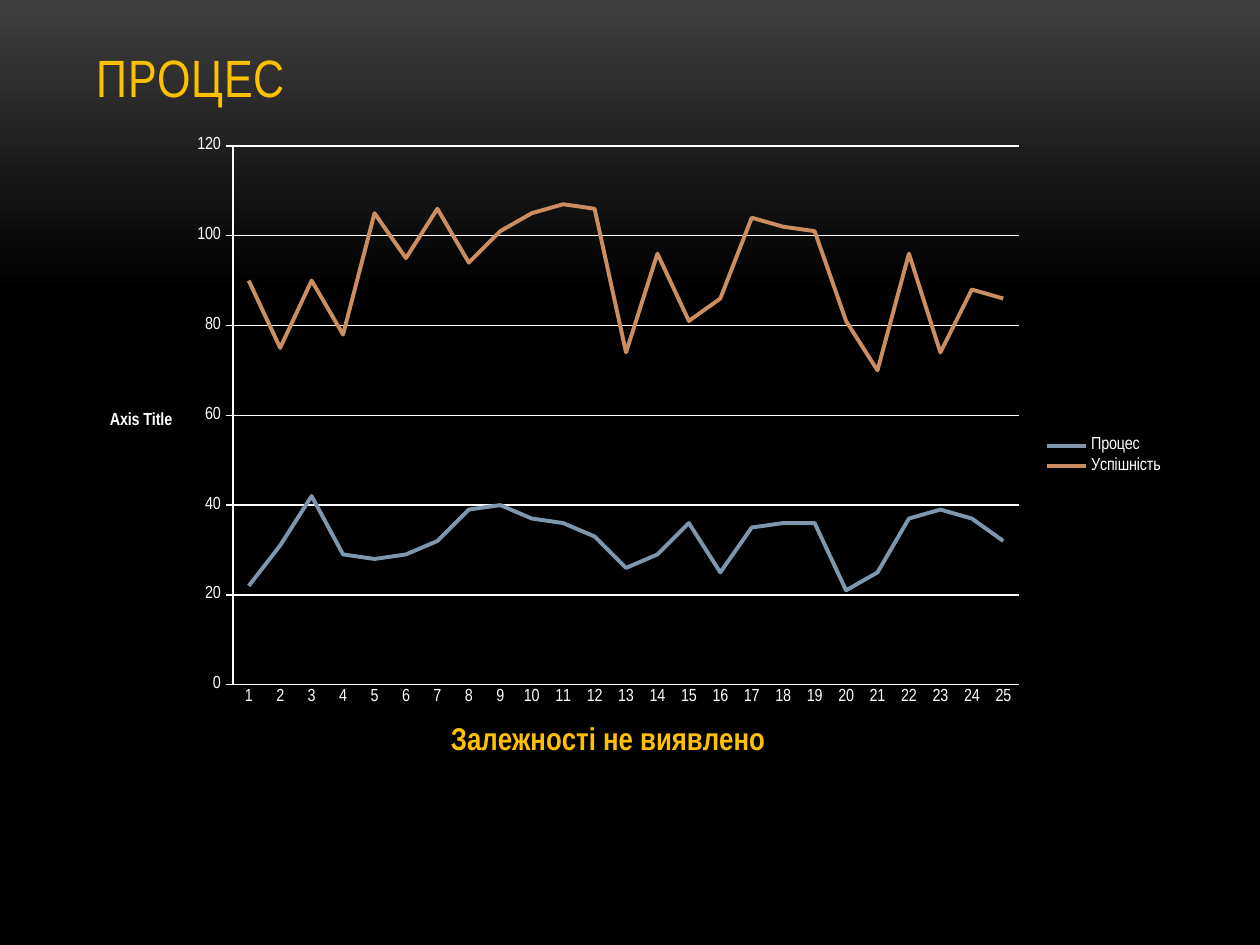
from pptx import Presentation
from pptx.chart.data import CategoryChartData
from pptx.dml.color import RGBColor as RGB
from pptx.enum.chart import XL_CHART_TYPE as CT, XL_LEGEND_POSITION as LP, XL_TICK_MARK as TM
from pptx.enum.text import MSO_ANCHOR as ANCHOR
from pptx.util import Inches, Pt

COLORS = {"top": "3F3F3F", "black": "000000", "gold": "FFC000", "white": "FFFFFF",
          "process": "7E97AD", "success": "CC8E60"}
SERIES = [
    ("Процес", "process", [22, 31, 42, 29, 28, 29, 32, 39, 40, 37, 36, 33, 26,
                           29, 36, 25, 35, 36, 36, 21, 25, 37, 39, 37, 32]),
    ("Успішність", "success", [90, 75, 90, 78, 105, 95, 106, 94, 101, 105, 107, 106, 74,
                               96, 81, 86, 104, 102, 101, 81, 70, 96, 74, 88, 86]),
]


class Deck:
    """Holds the style and the current slide."""

    def __init__(self, prs, font):
        self.font = font
        self.s = prs.slides.add_slide(prs.slide_layouts[6])

    def style(self, font, color, **values):
        for name, value in {"name": self.font, **values}.items():
            setattr(font, name, value)
        font.color.rgb = RGB.from_string(COLORS[color])

    def line(self, fmt, color, width):
        fmt.line.color.rgb = RGB.from_string(COLORS[color])
        fmt.line.width = Pt(width)

    def background(self, stops):
        fill = self.s.background.fill
        fill.gradient()
        fill.gradient_angle = 270
        for stop, (position, color) in zip(fill.gradient_stops, stops):
            stop.position = position
            stop.color.rgb = RGB.from_string(COLORS[color])

    def text(self, box, text, color, size):
        tf = self.s.shapes.add_textbox(*map(Inches, box)).text_frame
        for name, value in {"word_wrap": True, "vertical_anchor": ANCHOR.BOTTOM}.items():
            setattr(tf, name, value)
        r = tf.paragraphs[0].add_run()
        r.text = text
        self.style(r.font, color, size=Pt(size))
        r.font._element.set("spc", "50")

    def axis_title(self, axis, text, color, size):
        title = axis.axis_title
        r = title.text_frame.paragraphs[0].add_run()
        r.text = text
        self.style(r.font, color, size=Pt(size), bold=True)
        for body in title.element.xpath(".//a:bodyPr"):
            body.set("rot", "0")
            body.set("vert", "horz")

    def line_chart(self, box, series, x_title, y_title):
        data = CategoryChartData()
        data.categories = [str(n + 1) for n in range(len(series[0][2]))]
        for name, _, values in series:
            data.add_series(name, values)
        chart = self.s.shapes.add_chart(CT.LINE, *map(Inches, box), data).chart
        chart.has_title = False
        chart.has_legend = True
        chart.legend.position = LP.RIGHT
        chart.legend.include_in_layout = False
        self.style(chart.font, "white", size=Pt(10))
        plot = chart.plots[0]
        plot.vary_by_categories = False
        for ser, (_, color, _) in zip(plot.series, series):
            ser.smooth = False
            self.line(ser.format, color, 2.25)
        x, y = chart.category_axis, chart.value_axis
        x.major_tick_mark, y.major_tick_mark = TM.NONE, TM.OUTSIDE
        for axis in (x, y):
            axis.minor_tick_mark = TM.NONE
            self.line(axis.format, "white", 0.75)
        for name, value in {"minimum_scale": 0, "maximum_scale": 120, "major_unit": 20,
                            "has_major_gridlines": True}.items():
            setattr(y, name, value)
        self.line(y.major_gridlines.format, "white", 0.75)
        self.axis_title(x, x_title, "gold", 18)
        self.axis_title(y, y_title, "white", 10)


def main():
    prs = Presentation()
    prs.slide_width, prs.slide_height = Inches(10), Inches(7.5)
    deck = Deck(prs, "Arial Narrow")
    deck.background([(0, "top"), (0.31, "black")])
    deck.text((0.67, 0.3, 8.66, 0.61), "ПРОЦЕС", "gold", 30)
    deck.line_chart((0.67, 0.99, 8.67, 5.26), SERIES, "Залежності не виявлено", "Axis Title")
    prs.save("out.pptx")


if __name__ == "__main__":
    main()
